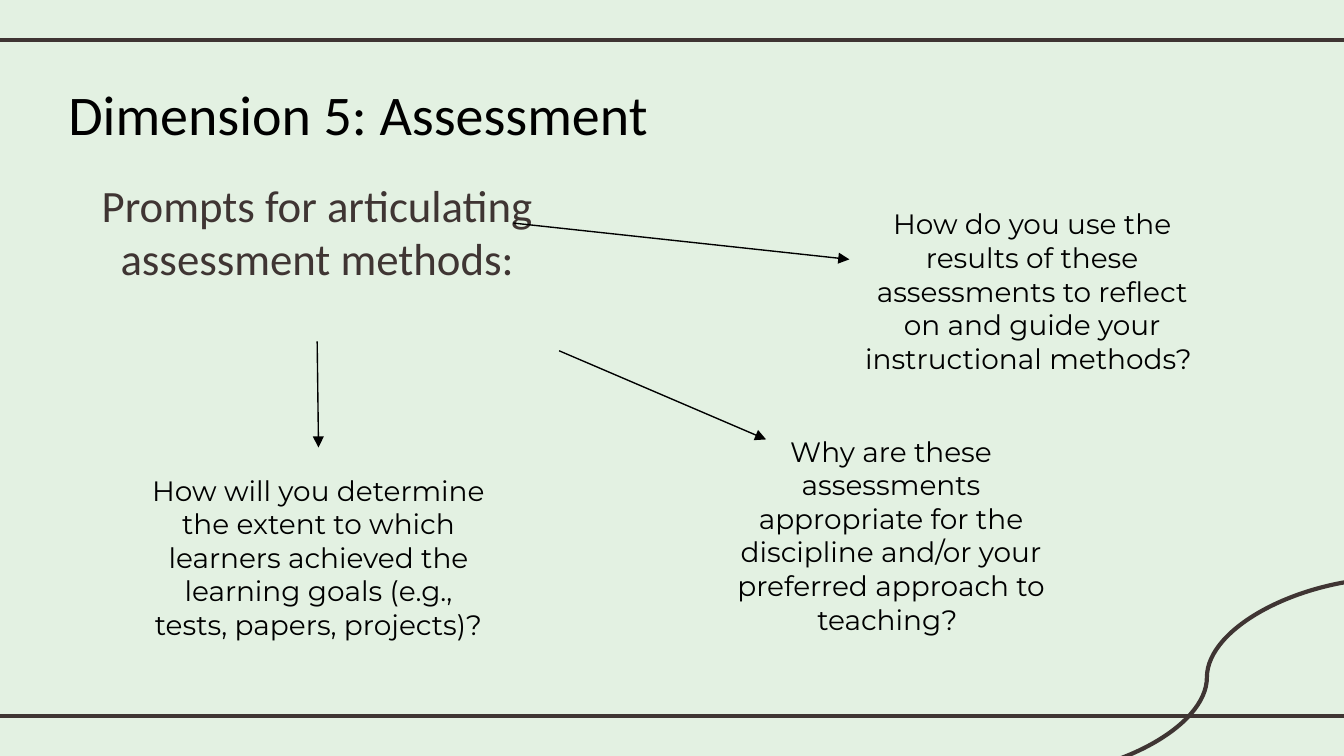
from dataclasses import dataclass

from lxml.etree import SubElement
from pptx import Presentation
from pptx.dml.color import RGBColor
from pptx.enum.shapes import MSO_CONNECTOR
from pptx.enum.text import MSO_ANCHOR, PP_ALIGN
from pptx.oxml.ns import qn
from pptx.slide import Slide
from pptx.util import Inches, Pt

MINT = RGBColor(0xE3, 0xF1, 0xE2)
BROWN = RGBColor(0x3F, 0x35, 0x33)
BLACK = RGBColor(0x00, 0x00, 0x00)
MARGIN = Inches(0.1)
SLIDE_WIDTH = Inches(10)
SLIDE_HEIGHT = Inches(10 * 9 / 16)


@dataclass(frozen=True)
class TextBlock:
    text: str
    left: float
    top: float
    width: float
    height: float
    size: float = 15
    font: str = "Montserrat"
    color: RGBColor = BLACK
    alignment: PP_ALIGN = PP_ALIGN.CENTER


@dataclass(frozen=True)
class Line:
    start: tuple[float, float]
    end: tuple[float, float]
    color: RGBColor = BROWN
    width: float = 2.25
    kind: MSO_CONNECTOR = MSO_CONNECTOR.STRAIGHT
    arrow: bool = False


def arrow(start: tuple[float, float], end: tuple[float, float]) -> Line:
    return Line(start, end, BLACK, 0.75, arrow=True)


DECORATIONS = [
    *(Line((-0.08, y), (10.08, y)) for y in (0.3, 5.33)),
    Line((10.37, 4.3), (7.59, 5.78), kind=MSO_CONNECTOR.CURVE),
]

TEXT_BLOCKS = [
    TextBlock("Dimension 5: Assessment", 0.41, 0.49, 6.59, 0.63,
              30, "Calibri", alignment=PP_ALIGN.LEFT),
    TextBlock("Prompts for articulating assessment methods:",
              0.56, 1.22, 3.6, 0.88, 24, "Calibri", BROWN),
    TextBlock("How do you use the results of these assessments to reflect on "
              "and guide your instructional methods? ", 6.32, 1.44, 2.72, 0.99),
    TextBlock("Why are these assessments appropriate for the discipline and/or "
              "your preferred approach to teaching? ", 5.27, 3.13, 2.72, 1.72),
    TextBlock("How will you determine the extent to which learners achieved the "
              "learning goals (e.g., tests, papers, projects)?",
              1.01, 3.42, 2.72, 0.99),
]

ARROWS = [
    arrow((3.82, 1.66), (6.32, 1.93)),
    arrow((4.16, 2.61), (5.7, 3.27)),
    arrow((2.36, 2.54), (2.37, 3.33)),
]


def draw_line(slide: Slide, line: Line) -> None:
    connector = slide.shapes.add_connector(
        line.kind, *(Inches(value) for value in (*line.start, *line.end)))
    connector.line.color.rgb = line.color
    connector.line.width = Pt(line.width)
    if line.arrow:
        outline = connector._element.spPr.find(qn("a:ln"))
        SubElement(outline, qn("a:tailEnd"), type="triangle")
    SubElement(connector._element.spPr, qn("a:effectLst"))


def draw_text(slide: Slide, block: TextBlock) -> None:
    shape = slide.shapes.add_textbox(
        Inches(block.left), Inches(block.top), Inches(block.width), Inches(block.height))
    text_frame = shape.text_frame
    text_frame.word_wrap = True
    text_frame.vertical_anchor = MSO_ANCHOR.TOP
    text_frame.margin_left = text_frame.margin_right = MARGIN
    text_frame.margin_top = text_frame.margin_bottom = MARGIN
    text_frame.text = block.text
    paragraph = text_frame.paragraphs[0]
    paragraph.alignment = block.alignment
    font = paragraph.runs[0].font
    font.name = block.font
    font.size = Pt(block.size)
    font.color.rgb = block.color


def main() -> None:
    presentation = Presentation()
    presentation.slide_width = SLIDE_WIDTH
    presentation.slide_height = SLIDE_HEIGHT
    slide = presentation.slides.add_slide(presentation.slide_layouts[6])
    slide.background.fill.solid()
    slide.background.fill.fore_color.rgb = MINT
    for line in DECORATIONS:
        draw_line(slide, line)
    for block in TEXT_BLOCKS:
        draw_text(slide, block)
    for line in ARROWS:
        draw_line(slide, line)
    presentation.save("out.pptx")


if __name__ == "__main__":
    main()
